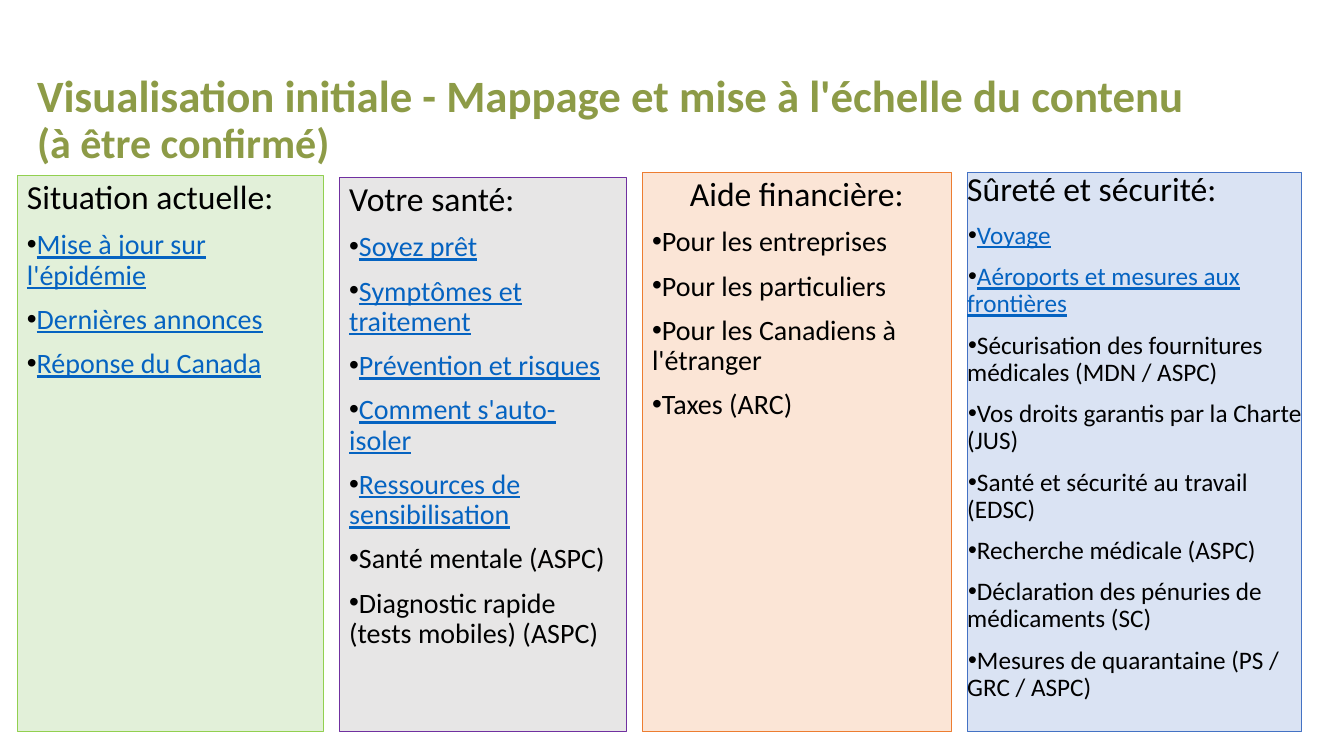
import pptx
import pptx.dml.color
import pptx.enum.shapes
import pptx.enum.text
import pptx.oxml.ns
import pptx.util
from lxml import etree

Pt = pptx.util.Pt
ALIGN = pptx.enum.text.PP_ALIGN

# Content
TITLE = [
    ("Visualisation initiale - Mappage et mise à l'échelle du contenu", 32),
    ("(à être confirmé)", 30),
]
COLUMNS = [
    {
        "heading": "Situation actuelle:",
        "linked": ["Mise à jour sur l'épidémie", "Dernières annonces", "Réponse du Canada"],
        "plain": [],
        "top": 125.3, "width": 218.9, "fill": "E2F0D9", "line": "92D050",
    },
    {
        "heading": "Votre santé:",
        "linked": ["Soyez prêt", "Symptômes et traitement", "Prévention et risques",
                   "Comment s'auto-isoler", "Ressources de sensibilisation"],
        "plain": ["Santé mentale (ASPC)", "Diagnostic rapide (tests mobiles) (ASPC)"],
        "top": 126.7, "width": 205.2, "fill": "E7E6E6", "line": "7030A0",
    },
    {
        "heading": "Aide financière:",
        "linked": [],
        "plain": ["Pour les entreprises", "Pour les particuliers",
                  "Pour les Canadiens à l'étranger", "Taxes (ARC)"],
        "top": 123.1, "width": 221, "fill": "FBE5D6", "line": "ED7D31",
        "align": ALIGN.CENTER,
    },
    {
        "heading": "Sûreté et sécurité:",
        "linked": ["Voyage", "Aéroports et mesures aux frontières"],
        "plain": ["Sécurisation des fournitures médicales (MDN / ASPC)",
                  "Vos droits garantis par la Charte (JUS)",
                  "Santé et sécurité au travail (EDSC)",
                  "Recherche médicale (ASPC)",
                  "Déclaration des pénuries de médicaments (SC)",
                  "Mesures de quarantaine (PS / GRC / ASPC)"],
        "top": 123.1, "width": 239, "fill": "DAE3F3", "line": "4472C4",
        "size": 18, "insets": (0, 0, 0, 0), "indent": 0.72,
    },
]
FONT = "Calibri"
BLACK, LINK, OLIVE = "000000", "0563C1", "8D9B47"
INSETS = (7.2, 3.6, 7.2, 3.6)
FIRST_LEFT, GAP, BOTTOM = 12.2, 11.2, 522.7


def color(value):
    return pptx.dml.color.RGBColor.from_string(value)


def prepare_frame(box, insets):
    frame = box.text_frame
    frame.word_wrap = True
    frame.auto_size = pptx.enum.text.MSO_AUTO_SIZE.NONE
    frame.vertical_anchor = pptx.enum.text.MSO_ANCHOR.TOP
    frame.margin_left, frame.margin_top, frame.margin_right, frame.margin_bottom = map(Pt, insets)
    return frame


def add_bullet(para, indent):
    properties = para._p.get_or_add_pPr()
    properties.set("marL", "0")
    properties.set("indent", str(int(Pt(indent))))
    tag = pptx.oxml.ns.qn
    bullet_color = etree.SubElement(properties, tag("a:buClr"))
    etree.SubElement(bullet_color, tag("a:srgbClr"), val=BLACK)
    etree.SubElement(properties, tag("a:buFont"), typeface="Arial")
    etree.SubElement(properties, tag("a:buChar"), char="•")


def write(frame, text, size, ink=BLACK, bold=False, underline=False,
          align=ALIGN.LEFT, before=0, bullet=False, indent=0):
    first = frame.paragraphs[0]
    para = frame.add_paragraph() if first.runs else first
    para.alignment = align
    para.line_spacing = 0.9
    para.space_before = Pt(before)
    if bullet:
        add_bullet(para, indent)
    span = para.add_run()
    span.text = text
    span.font.name = FONT
    span.font.size = Pt(size)
    span.font.bold = bold
    span.font.underline = underline
    span.font.color.rgb = color(ink)


deck = pptx.Presentation()
deck.slide_width, deck.slide_height = Pt(960), Pt(540)
page = deck.slides.add_slide(deck.slide_layouts[6])

# Title
title = page.shapes.add_textbox(Pt(19.4), Pt(13.7), Pt(892.8), Pt(100.8))
title_frame = prepare_frame(title, (7.2, 39.3, 7.2, 3.6))
for text, size in TITLE:
    write(title_frame, text, size, ink=OLIVE, bold=True)

# Columns, left to right, sharing one bottom edge
left = FIRST_LEFT
for column in COLUMNS:
    box = page.shapes.add_shape(
        pptx.enum.shapes.MSO_SHAPE.RECTANGLE, Pt(left), Pt(column["top"]),
        Pt(column["width"]), Pt(BOTTOM - column["top"]))
    box.shadow.inherit = False
    box.fill.solid()
    box.fill.fore_color.rgb = color(column["fill"])
    box.line.color.rgb = color(column["line"])
    box.line.width = Pt(0.75)

    frame = prepare_frame(box, column.get("insets", INSETS))
    write(frame, column["heading"], 24, align=column.get("align", ALIGN.LEFT))
    for key, ink in (("linked", LINK), ("plain", BLACK)):
        for text in column[key]:
            write(frame, text, column.get("size", 20), ink=ink, underline=key == "linked",
                  before=10, bullet=True, indent=column.get("indent", 0))
    left += column["width"] + GAP

deck.save("out.pptx")
